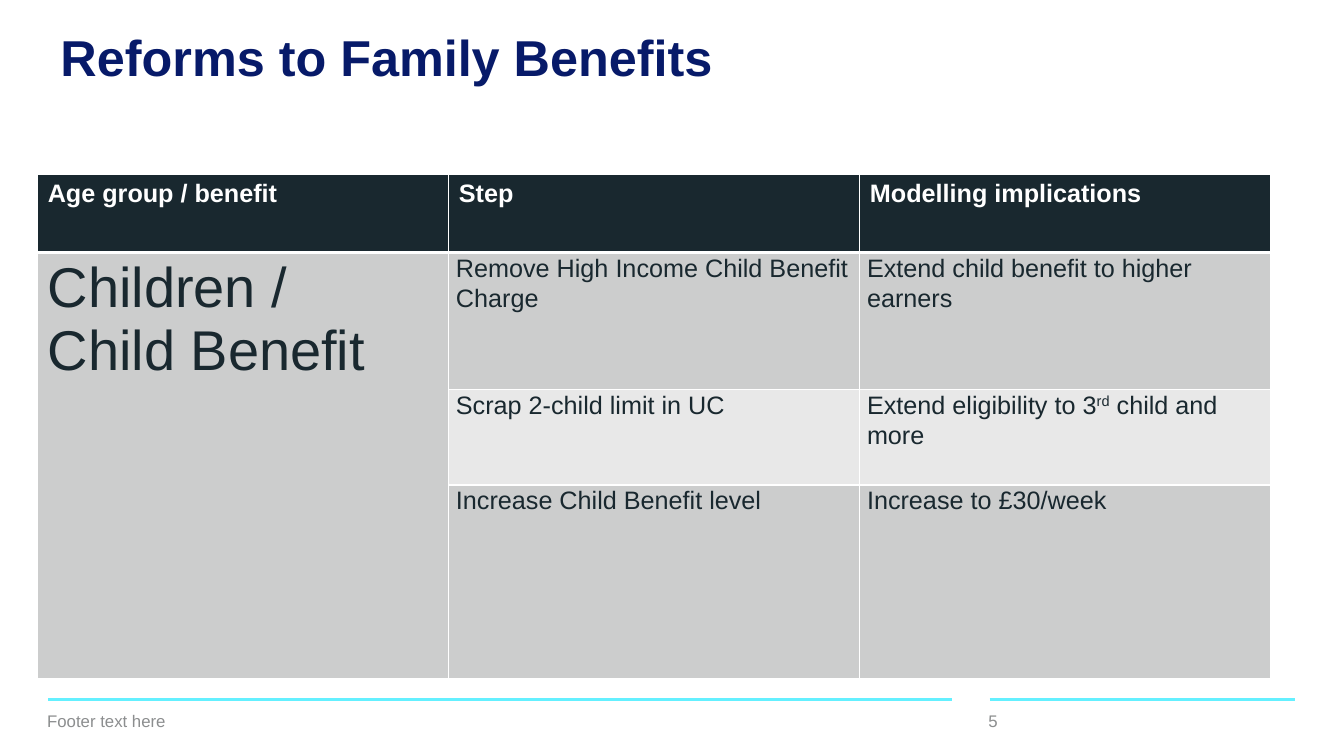
from lxml.etree import SubElement
from pptx import Presentation
from pptx.dml.color import RGBColor
from pptx.enum.shapes import MSO_CONNECTOR
from pptx.enum.text import MSO_ANCHOR, PP_ALIGN
from pptx.oxml.ns import qn
from pptx.util import Cm, Pt

NAVY = RGBColor(0x07, 0x1A, 0x69)
INK = RGBColor(0x19, 0x28, 0x2F)
WHITE = RGBColor(0xFF, 0xFF, 0xFF)
DARK_BAND = RGBColor(0xCC, 0xCD, 0xCD)
LIGHT_BAND = RGBColor(0xE8, 0xE8, 0xE8)
CYAN = RGBColor(0x64, 0xF0, 0xFF)
FOOTER_GREY = RGBColor(0x8C, 0x8E, 0x8F)

HEADER_FORMAT = {"size": Pt(18), "bold": True}
GROUP_FORMAT = {"size": Pt(40), "bold": False}
BODY_FORMAT = {"size": Pt(18), "bold": False}
BODY_MARGINS = {"margin_left": Cm(0.18), "margin_right": Cm(0.18),
                "margin_top": 0, "margin_bottom": 0}

HEADERS = ["Age group / benefit", "Step", "Modelling implications"]
# Each cell is a list of runs; every second run is superscript.
REFORMS = [
    (["Remove High Income Child Benefit Charge"],
     ["Extend child benefit to higher earners"]),
    (["Scrap 2-child limit in UC"],
     ["Extend eligibility to 3", "rd", " child and more"]),
    (["Increase Child Benefit level"], ["Increase to £30/week"]),
]
COLUMN_WIDTH = Cm(10.36)
ROW_HEIGHTS = [Cm(1.96), Cm(3.45), Cm(2.41), Cm(4.88)]


def format_text(paragraph, color, settings):
    font = paragraph.font
    font.name = "Arial"
    font.color.rgb = color
    for name, value in settings.items():
        setattr(font, name, value)


def style_cell(cell, fill, top, bottom):
    """Draw white borders, with top and bottom widths in points, then fill."""
    properties = cell._tc.get_or_add_tcPr()
    for side, width in {"L": 1, "R": 1, "T": top, "B": bottom}.items():
        border = SubElement(properties, qn(f"a:ln{side}"), w=str(Pt(width)))
        solid = SubElement(border, qn("a:solidFill"))
        SubElement(solid, qn("a:srgbClr"), val=str(WHITE))
    cell.fill.solid()
    cell.fill.fore_color.rgb = fill


prs = Presentation()
prs.slide_width, prs.slide_height = Cm(33.87), Cm(19.05)
slide = prs.slides.add_slide(prs.slide_layouts[5])

# Title
title = slide.shapes.title
title.left, title.top, title.width, title.height = Cm(1.27), Cm(0.71), Cm(22.6), Cm(3.68)
title.text_frame.text = "Reforms to Family Benefits"
title.text_frame.vertical_anchor = MSO_ANCHOR.TOP
heading = title.text_frame.paragraphs[0]
heading.alignment = PP_ALIGN.LEFT
heading.line_spacing = 0.9
format_text(heading, NAVY, {"size": Pt(36), "bold": True})

# Reform table
reforms = slide.shapes.add_table(
    len(ROW_HEIGHTS), len(HEADERS), Cm(0.95), Cm(4.4),
    COLUMN_WIDTH * len(HEADERS), sum(ROW_HEIGHTS)).table
for column in reforms.columns:
    column.width = COLUMN_WIDTH
for row, height in zip(reforms.rows, ROW_HEIGHTS):
    row.height = height

for col, label in enumerate(HEADERS):
    header = reforms.cell(0, col)
    header.text = label
    style_cell(header, INK, 1, 3)
    format_text(header.text_frame.paragraphs[0], WHITE, HEADER_FORMAT)

for row, entries in enumerate(REFORMS, start=1):
    top = 3 if row == 1 else 1
    style_cell(reforms.cell(row, 0), DARK_BAND, top, 1)
    for col, pieces in enumerate(entries, start=1):
        cell = reforms.cell(row, col)
        style_cell(cell, DARK_BAND if row % 2 else LIGHT_BAND, top, 1)
        for name, value in BODY_MARGINS.items():
            setattr(cell, name, value)
        paragraph = cell.text_frame.paragraphs[0]
        paragraph.line_spacing = 1.07
        paragraph.space_after = Pt(8)
        format_text(paragraph, INK, BODY_FORMAT)
        for index, piece in enumerate(pieces):
            run = paragraph.add_run()
            run.text = piece
            if index % 2:
                run._r.get_or_add_rPr().set("baseline", "30000")

age_group = reforms.cell(1, 0)
age_group.merge(reforms.cell(len(REFORMS), 0))
age_group.text = "Children /\nChild Benefit"
for paragraph in age_group.text_frame.paragraphs:
    format_text(paragraph, INK, GROUP_FORMAT)

# Footer rules
for start, end in [(1.22, 23.98), (24.94, 32.64)]:
    rule = slide.shapes.add_connector(
        MSO_CONNECTOR.STRAIGHT, Cm(start), Cm(17.63), Cm(end), Cm(17.63))
    rule.line.color.rgb = CYAN
    rule.line.width = Pt(2.25)
    SubElement(rule._element.spPr, qn("a:effectLst"))

# Footer text and page number
for text, left, width in [("Footer text here", 0.94, 21.16), ("5", 24.66, 3.02)]:
    footer = slide.shapes.add_textbox(Cm(left), Cm(17.65), Cm(width), Cm(1.02)).text_frame
    footer.word_wrap = True
    footer.vertical_anchor = MSO_ANCHOR.MIDDLE
    footer.text = text
    format_text(footer.paragraphs[0], FOOTER_GREY, {"size": Pt(12)})

prs.save("out.pptx")
